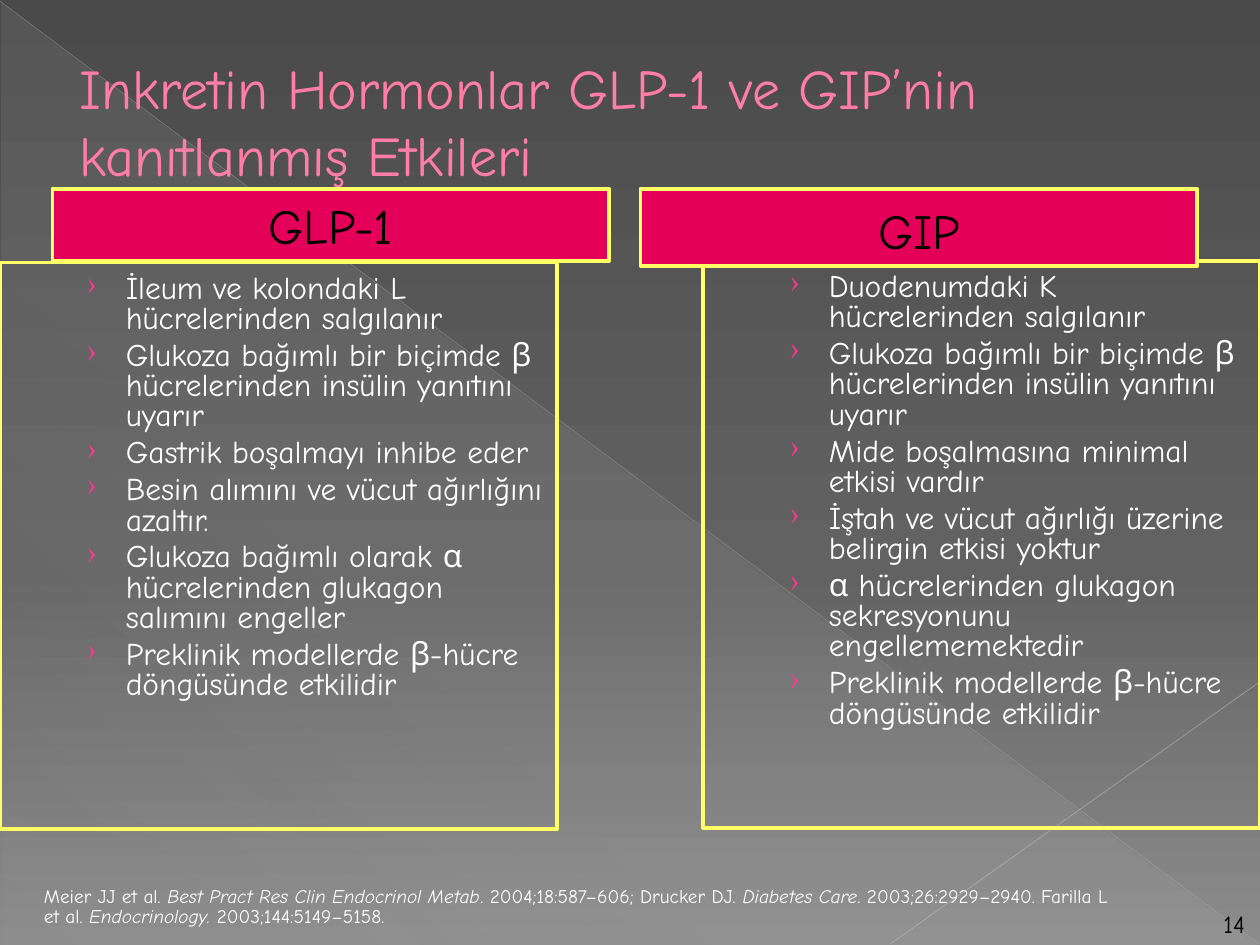
from lxml.etree import SubElement
from pptx import Presentation
from pptx.dml.color import RGBColor
from pptx.enum.shapes import MSO_CONNECTOR as Connector, MSO_SHAPE as Shape
from pptx.enum.text import MSO_ANCHOR as Anchor, MSO_AUTO_SIZE as AutoSize, PP_ALIGN as Align
from pptx.oxml.ns import qn
from pptx.util import Pt

FONT = "Comic Neue"
WHITE = RGBColor(0xFF, 0xFF, 0xFF)
BLACK = RGBColor(0x00, 0x00, 0x00)
ROSE = RGBColor(0xFF, 0x7D, 0xA7)
ROSE_EDGE = RGBColor(0xB1, 0x27, 0x61)
MAGENTA = RGBColor(0xE4, 0x00, 0x59)
BULLET = RGBColor(0xFF, 0x38, 0x8C)
YELLOW = RGBColor(0xFF, 0xFF, 0x66)
DARK = RGBColor(0x4A, 0x4A, 0x4A)
MIDDLE = RGBColor(0x62, 0x62, 0x62)
LIGHT = RGBColor(0x8C, 0x8C, 0x8C)
SHEEN = RGBColor(0xD2, 0xD2, 0xD2)
RAY = RGBColor(0xBF, 0xBF, 0xBF)
RAY_SHORT = RGBColor(0xC6, 0xC6, 0xC6)

GLP_EFFECTS = [
    "İleum ve kolondaki L hücrelerinden salgılanır",
    "Glukoza bağımlı bir biçimde β hücrelerinden insülin yanıtını uyarır",
    "Gastrik boşalmayı inhibe eder",
    "Besin alımını ve vücut ağırlığını azaltır.",
    "Glukoza bağımlı olarak α hücrelerinden glukagon salımını engeller",
    "Preklinik modellerde β-hücre döngüsünde etkilidir",
]
GIP_EFFECTS = [
    "Duodenumdaki K hücrelerinden salgılanır",
    "Glukoza bağımlı bir biçimde β hücrelerinden insülin yanıtını uyarır",
    "Mide boşalmasına minimal etkisi vardır",
    "İştah ve vücut ağırlığı üzerine belirgin etkisi yoktur",
    "α hücrelerinden glukagon sekresyonunu engellememektedir",
    "Preklinik modellerde β-hücre döngüsünde etkilidir",
]
CITATION = [
    ("Meier JJ et al. ", False),
    ("Best Pract Res Clin Endocrinol Metab", True),
    (". 2004;18:587–606; Drucker DJ. ", False),
    ("Diabetes Care", True),
    (". 2003;26:2929–2940. Farilla L et al. ", False),
    ("Endocrinology. ", True),
    ("2003;144:5149–5158.", False),
]


def in_points(box):
    """Turn plain numbers into point lengths."""
    return [Pt(length) for length in box]


def add_alpha(color, percent):
    """Give a colour element an opacity."""
    SubElement(color, qn("a:alpha"), val=str(percent * 1000))


def set_gradient(fill, owner, angle, stops):
    """Fill with a linear gradient of (position, colour, opacity) stops."""
    fill.gradient()
    gradient = owner.find(f".//{qn('a:gradFill')}")
    gradient.find(qn("a:lin")).set("ang", str(angle * 60000))
    stop_list = gradient.find(qn("a:gsLst"))
    stop_list.clear()
    for position, color, opacity in stops:
        stop = SubElement(stop_list, qn("a:gs"), pos=str(position * 1000))
        add_alpha(SubElement(stop, qn("a:srgbClr"), val=str(color)), opacity)


def add_span(para, text, size, color, italic=False):
    """Add one formatted run to a paragraph."""
    span = para.add_run()
    span.text = text
    font = span.font
    font.name, font.size, font.italic = FONT, Pt(size), italic
    font.color.rgb = color
    return span


def add_frame(page, box):
    """Add a rectangle with a yellow outline and no fill."""
    frame = page.shapes.add_shape(Shape.RECTANGLE, *in_points(box))
    frame.shadow.inherit = False
    frame.fill.background()
    frame.line.color.rgb = YELLOW
    frame.line.width = Pt(2.25)
    frame.text_frame.word_wrap = True
    return frame


def add_ray(page, ends, color, width, opacity):
    """Add a thin translucent line between two points."""
    ray = page.shapes.add_connector(Connector.STRAIGHT, *in_points(ends))
    ray.line.color.rgb = color
    ray.line.width = Pt(width)
    properties = ray._element.spPr
    add_alpha(properties.find(f".//{qn('a:srgbClr')}"), opacity)
    SubElement(properties, qn("a:effectLst"))


def add_backdrop(page, width, height):
    """Draw the gradient background, the sheen and the two rays."""
    set_gradient(page.background.fill, page._element, 90,
                 [(0, DARK, 100), (60, MIDDLE, 100), (100, LIGHT, 100)])
    sheen = page.shapes.add_shape(
        Shape.RIGHT_TRIANGLE, *in_points((0.72, 1.44, width - 1.44, height - 1.44)))
    sheen.shadow.inherit = False
    sheen.line.fill.background()
    set_gradient(sheen.fill, sheen._element, 133,
                 [(0, SHEEN, 10), (70, SHEEN, 8), (100, SHEEN, 1)])
    add_ray(page, (0, 0.72, width - 0.72, height - 0.72), RAY, 0.39, 35)
    add_ray(page, (width, 389.5, 509, height - 0.72), RAY_SHORT, 0.47, 45)


def add_title(page, box, text):
    """Place and format the title placeholder."""
    title = page.shapes.title
    title.left, title.top, title.width, title.height = in_points(box)
    page.shapes._spTree.append(title._element)
    frame = title.text_frame
    frame.auto_size = AutoSize.NONE
    frame.vertical_anchor = Anchor.MIDDLE
    para = frame.paragraphs[0]
    para.alignment = Align.LEFT
    para._p.get_or_add_pPr().set("marL", str(Pt(38.16)))
    span = add_span(para, text, 32, ROSE)
    outline = SubElement(span.font._element, qn("a:ln"), w=str(Pt(0.5)))
    SubElement(SubElement(outline, qn("a:solidFill")), qn("a:srgbClr"), val=str(ROSE_EDGE))
    span.font._element.insert(0, outline)


def add_effects(page, box, effects):
    """Add a framed bullet list."""
    frame = add_frame(page, box).text_frame
    frame.vertical_anchor = Anchor.TOP
    frame.margin_left = frame.margin_right = frame.margin_top = Pt(7.2)
    frame.margin_bottom = Pt(3.6)
    for index, effect in enumerate(effects):
        para = frame.add_paragraph() if index else frame.paragraphs[0]
        para.level = 1
        para.alignment = Align.LEFT
        para.line_spacing = 0.8
        para.space_before = Pt(3.8)
        properties = para._p.get_or_add_pPr()
        properties.set("marL", str(Pt(64.8)))
        properties.set("indent", str(Pt(-22.32)))
        SubElement(SubElement(properties, qn("a:buClr")), qn("a:srgbClr"), val=str(BULLET))
        SubElement(properties, qn("a:buSzPct"), val="95000")
        SubElement(properties, qn("a:buChar"), char="›")
        add_span(para, effect, 18, WHITE)


def add_header(page, box, text):
    """Add a magenta column header."""
    header = add_frame(page, box)
    header.fill.solid()
    header.fill.fore_color.rgb = MAGENTA
    header.text_frame.vertical_anchor = Anchor.BOTTOM
    para = header.text_frame.paragraphs[0]
    para.alignment = Align.CENTER
    add_span(para, text, 28, BLACK)


def add_citation(page, box, parts):
    """Add the source line with italic journal names."""
    frame = page.shapes.add_textbox(*in_points(box)).text_frame
    frame.word_wrap = True
    frame.vertical_anchor = Anchor.BOTTOM
    para = frame.paragraphs[0]
    para.line_spacing = 0.85
    for text, italic in parts:
        add_span(para, text, 11, WHITE, italic)


def add_page_number(page, box, number):
    """Add the page number in the corner."""
    frame = page.shapes.add_textbox(*in_points(box)).text_frame
    frame.word_wrap = False
    para = frame.paragraphs[0]
    para.alignment = Align.RIGHT
    add_span(para, number, 14, BLACK)


def main():
    """Build and save the deck."""
    width, height, column = 720, 540, 318.24
    deck = Presentation()
    deck.slide_width, deck.slide_height = Pt(width), Pt(height)
    page = deck.slides.add_slide(deck.slide_layouts[5])
    add_backdrop(page, width, height)
    add_title(page, (0, 23.76, 612, 90), "Inkretin Hormonlar GLP-1 ve GIP’nin kanıtlanmış Etkileri")
    add_effects(page, (0, 150, column, 324), GLP_EFFECTS)
    add_effects(page, (width - column, 149, column, 324), GIP_EFFECTS)
    add_header(page, (30, 108, column, 41), "GLP-1")
    add_header(page, (366, 108, column, 44), "GIP")
    add_citation(page, (18, 504, 630, 29.5), CITATION)
    add_page_number(page, (689, 516, 29.5, 24), "14")
    deck.save("out.pptx")


if __name__ == "__main__":
    main()
